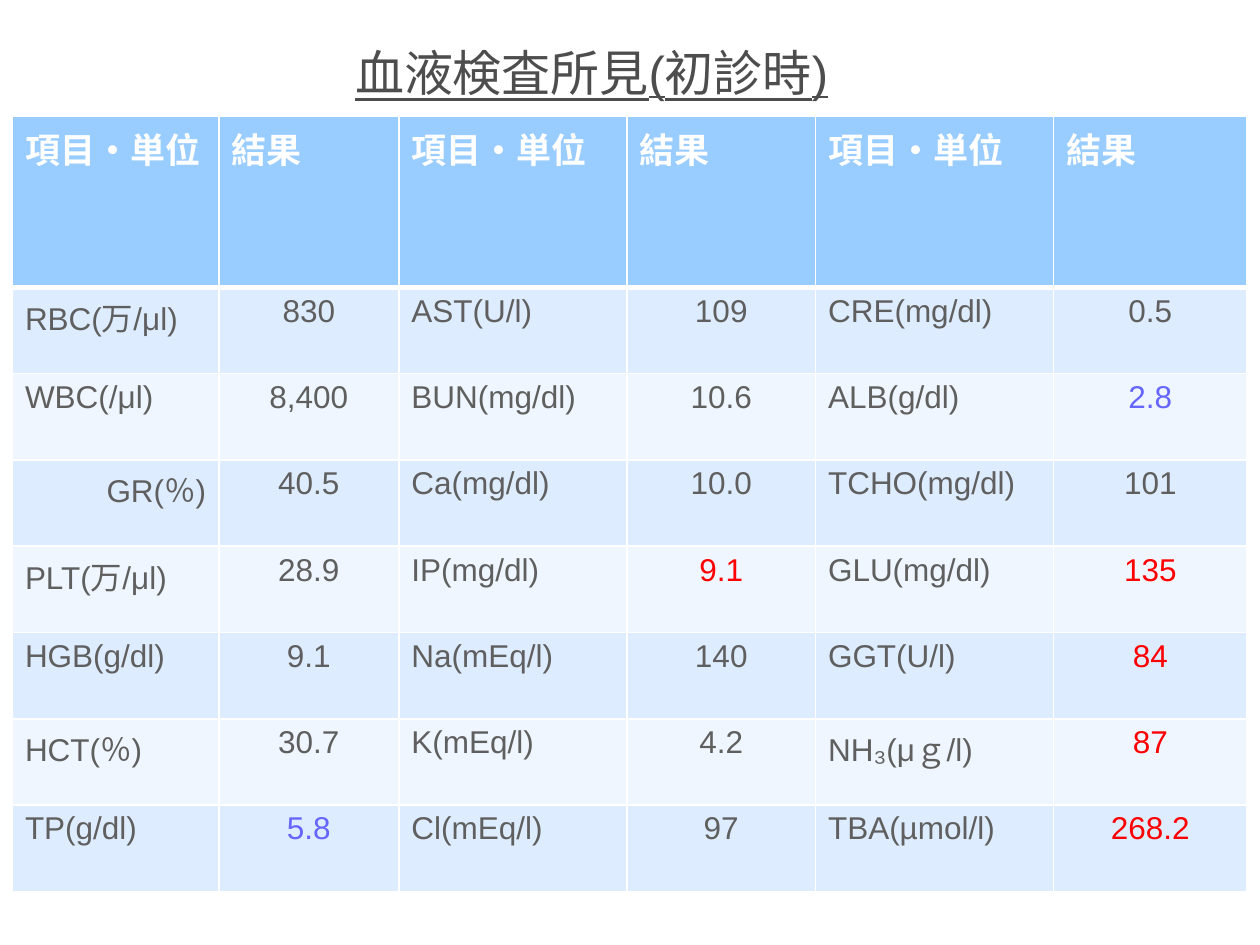
import pptx
import pptx.util
import pptx.dml.color
import pptx.enum.text
import pptx.oxml
import pptx.oxml.ns

Cm = pptx.util.Cm
RGBColor = pptx.dml.color.RGBColor
ALIGN = pptx.enum.text.PP_ALIGN

WHITE = RGBColor(0xFF, 0xFF, 0xFF)
TITLE_GRAY = RGBColor(0x4D, 0x4D, 0x4D)
TEXT_GRAY = RGBColor(0x5F, 0x5F, 0x5F)
HIGH_RED = RGBColor(0xFF, 0x00, 0x00)
LOW_BLUE = RGBColor(0x66, 0x66, 0xFF)
HEADER_BLUE = RGBColor(0x99, 0xCC, 0xFF)
BAND_DARK = RGBColor(0xDE, 0xEC, 0xFF)
BAND_LIGHT = RGBColor(0xEF, 0xF6, 0xFF)

COLUMN_WIDTHS = [4.16, 3.63, 4.6, 3.8, 4.8, 3.9]
HEADER_HEIGHT = 3.45
ROW_HEIGHT = 1.74

HEADER = ["項目・単位", "結果"] * 3
RESULTS = [
    ["RBC(万/μl)", "830", "AST(U/l)", "109", "CRE(mg/dl)", "0.5"],
    ["WBC(/μl)", "8,400", "BUN(mg/dl)", "10.6", "ALB(g/dl)", "2.8"],
    ["GR(％)", "40.5", "Ca(mg/dl)", "10.0", "TCHO(mg/dl)", "101"],
    ["PLT(万/μl)", "28.9", "IP(mg/dl)", "9.1", "GLU(mg/dl)", "135"],
    ["HGB(g/dl)", "9.1", "Na(mEq/l)", "140", "GGT(U/l)", "84"],
    ["HCT(％)", "30.7", "K(mEq/l)", "4.2", "NH₃(μｇ/l)", "87"],
    ["TP(g/dl)", "5.8", "Cl(mEq/l)", "97", "TBA(µmol/l)", "268.2"],
]
HIGH_ITEMS = {"IP(mg/dl)", "GLU(mg/dl)", "GGT(U/l)", "NH₃(μｇ/l)", "TBA(µmol/l)"}
LOW_ITEMS = {"ALB(g/dl)", "TP(g/dl)"}


def set_text(tf, text, size=18, color=TEXT_GRAY, bold=False, underline=None, align=ALIGN.LEFT):
    p = tf.paragraphs[0]
    p.alignment = align
    r = p.add_run()
    r.text = text
    r.font.name = "Arial"
    r.font.size = pptx.util.Pt(size)
    r.font.bold = bold
    r.font.underline = underline
    r.font.color.rgb = color


def set_borders(cell, top=1, bottom=1):
    tc_pr = cell._tc.get_or_add_tcPr()
    sides = [("lnL", 1), ("lnR", 1), ("lnT", top), ("lnB", bottom)]
    for i, (side, width) in enumerate(sides):
        ln = pptx.oxml.parse_xml(
            f'<a:{side} {pptx.oxml.ns.nsdecls("a")} w="{pptx.util.Pt(width)}">'
            f'<a:solidFill><a:srgbClr val="{WHITE}"/></a:solidFill></a:{side}>'
        )
        tc_pr.insert(i, ln)


def fill_cell(cell, text, fill, top=1, bottom=1, **text_format):
    cell.fill.solid()
    cell.fill.fore_color.rgb = fill
    set_borders(cell, top, bottom)
    set_text(cell.text_frame, text, **text_format)


def result_color(item):
    if item in HIGH_ITEMS:
        return HIGH_RED
    return LOW_BLUE if item in LOW_ITEMS else TEXT_GRAY


def add_title(s, text):
    box = s.shapes.add_textbox(Cm(6.91), Cm(0.74), Cm(12.4), Cm(1.45))
    box.text_frame.word_wrap = True
    set_text(box.text_frame, text, size=28, color=TITLE_GRAY, underline=True)


def add_results_table(s):
    height = HEADER_HEIGHT + ROW_HEIGHT * len(RESULTS)
    table = s.shapes.add_table(
        len(RESULTS) + 1, len(HEADER),
        Cm(0.25), Cm(2.34), Cm(sum(COLUMN_WIDTHS)), Cm(height),
    ).table
    for column, width in zip(table.columns, COLUMN_WIDTHS):
        column.width = Cm(width)
    for i, row in enumerate(table.rows):
        row.height = Cm(ROW_HEIGHT if i else HEADER_HEIGHT)

    for j, text in enumerate(HEADER):
        fill_cell(table.cell(0, j), text, HEADER_BLUE, bottom=3,
                  size=20, color=WHITE, bold=True)
    for i, values in enumerate(RESULTS, start=1):
        fill = BAND_DARK if i % 2 else BAND_LIGHT
        top = 3 if i == 1 else 1
        for j in range(0, len(values), 2):
            item, result = values[j:j + 2]
            item_align = ALIGN.RIGHT if item == "GR(％)" else ALIGN.LEFT
            fill_cell(table.cell(i, j), item, fill, top, align=item_align)
            fill_cell(table.cell(i, j + 1), result, fill, top,
                      color=result_color(item), align=ALIGN.CENTER)


def main():
    prs = pptx.Presentation()
    prs.slide_width = Cm(25.4)
    prs.slide_height = Cm(19.05)
    s = prs.slides.add_slide(prs.slide_layouts[6])
    add_title(s, "血液検査所見(初診時)")
    add_results_table(s)
    prs.save("out.pptx")


if __name__ == "__main__":
    main()
